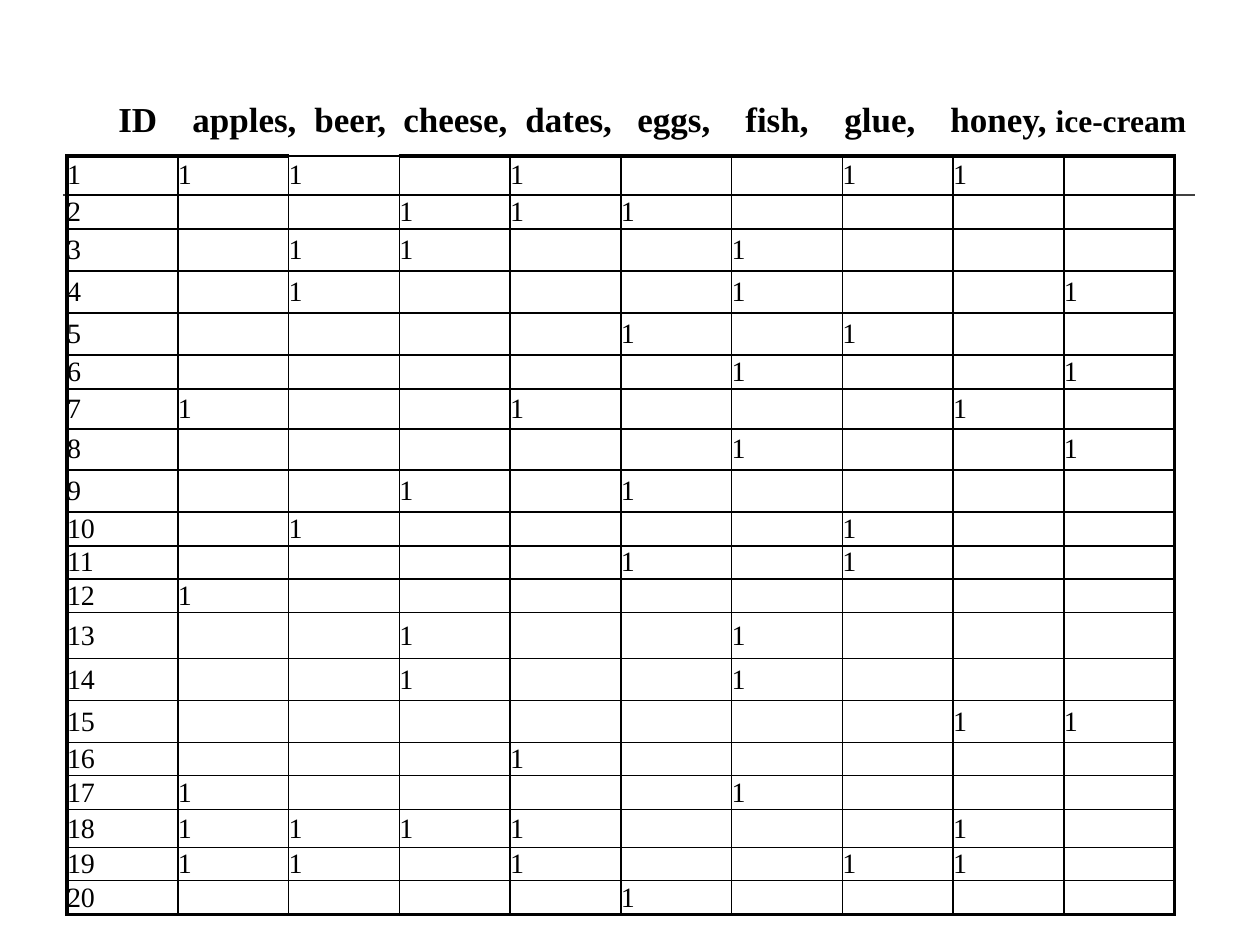
"""Build a slide with a 0/1 table of twenty shopping baskets."""
from pptx import Presentation, util as u
from pptx.dml.color import RGBColor
from pptx.enum import dml, shapes, text
from pptx.oxml import ns
from lxml import etree

ITEMS = [("ID", 0), ("apples,", 74), ("beer,", 196), ("cheese,", 285), ("dates,", 407),
         ("eggs,", 519), ("fish,", 627), ("glue,", 726), ("honey, ", 832)]
LAST_ITEM = "ice-cream"
BASKETS = [
    (1, 2, 4, 7, 8), (3, 4, 5), (2, 3, 6), (2, 6, 9), (5, 7),
    (6, 9), (1, 4, 8), (6, 9), (3, 5), (2, 7),
    (5, 7), (1,), (3, 6), (3, 6), (8, 9),
    (4,), (1, 6), (1, 2, 3, 4, 8), (1, 2, 4, 7, 8), (5,),
]
ROW_HEIGHTS = [39, 34, 42, 42, 42, 34, 40, 41, 42, 34, 33, 34, 46, 42, 42, 33, 34, 38, 33, 34]
COLUMNS = 10
TABLE_BOX = (67, 156, 1108, sum(ROW_HEIGHTS))
HEADER_BOX = (106, 91, 1097, 54)
RULE = (63, 195, 1195, 195)
THIN_TOP = (0, 2)
THEME = {"font": "Times New Roman", "ink": "000000", "rule": "404040",
         "header": 20, "last": 18, "cell": 16, "thin": 1, "thick": 2.25}


def px(*lengths):
    return [u.Emu(round(length * 914400 / 126)) for length in lengths]


def add_span(para, words, size, bold=False):
    span = para.add_run()
    span.text = words
    span.font.name = THEME["font"]
    span.font.size = u.Pt(size)
    span.font.bold = bold
    span.font.color.rgb = RGBColor.from_string(THEME["ink"])


def add_rule(page):
    rule = page.shapes.add_connector(shapes.MSO_CONNECTOR.STRAIGHT, *px(*RULE))
    rule.line.color.rgb = RGBColor.from_string(THEME["rule"])
    rule.line.width = u.Pt(THEME["thin"])
    etree.SubElement(rule._element.spPr, ns.qn("a:effectLst"))


def set_borders(cell, row, column):
    outer = {"lnL": column == 0, "lnR": column == COLUMNS - 1,
             "lnT": row == 0 and (row, column) != THIN_TOP,
             "lnB": row == len(BASKETS) - 1}
    props = cell._tc.get_or_add_tcPr()
    for side, thick in outer.items():
        width = u.Pt(THEME["thick" if thick else "thin"])
        line = etree.SubElement(props, ns.qn(f"a:{side}"), w=str(width))
        fill = etree.SubElement(line, ns.qn("a:solidFill"))
        etree.SubElement(fill, ns.qn("a:srgbClr"), val=THEME["ink"])


def fill_cell(cell, words):
    cell.margin_left = cell.margin_right = cell.margin_top = cell.margin_bottom = 0
    cell.vertical_anchor = text.MSO_ANCHOR.MIDDLE
    cell.fill.background()
    para = cell.text_frame.paragraphs[0]
    if words:
        add_span(para, words, THEME["cell"])
    else:
        end = etree.SubElement(para._p, ns.qn("a:endParaRPr"), sz=str(THEME["cell"] * 100))
        etree.SubElement(end, ns.qn("a:latin"), typeface=THEME["font"])


def add_baskets(page):
    table = page.shapes.add_table(len(BASKETS), COLUMNS, *px(*TABLE_BOX)).table
    table.first_row = table.horz_banding = False
    for column in table.columns:
        column.width = px(TABLE_BOX[2] / COLUMNS)[0]
    for row, basket in enumerate(BASKETS):
        table.rows[row].height = px(ROW_HEIGHTS[row])[0]
        for column in range(COLUMNS):
            cell = table.cell(row, column)
            set_borders(cell, row, column)
            mark = "1" if column in basket else ""
            fill_cell(cell, mark if column else str(row + 1))


def add_header(page):
    box = page.shapes.add_textbox(*px(*HEADER_BOX))
    box.text_frame.word_wrap = True
    box.text_frame.margin_right = 0
    para = box.text_frame.paragraphs[0]
    stops = etree.SubElement(para._p.get_or_add_pPr(), ns.qn("a:tabLst"))
    for _, offset in ITEMS[1:]:
        etree.SubElement(stops, ns.qn("a:tab"), pos=str(px(offset)[0]), algn="l")
    add_span(para, "\t".join(name for name, _ in ITEMS), THEME["header"], True)
    add_span(para, LAST_ITEM, THEME["last"], True)


def main():
    deck = Presentation()
    deck.slide_width, deck.slide_height = px(1260, 945)
    page = deck.slides.add_slide(deck.slide_layouts[6])
    add_rule(page)
    add_baskets(page)
    add_header(page)
    deck.save("out.pptx")


if __name__ == "__main__":
    main()
